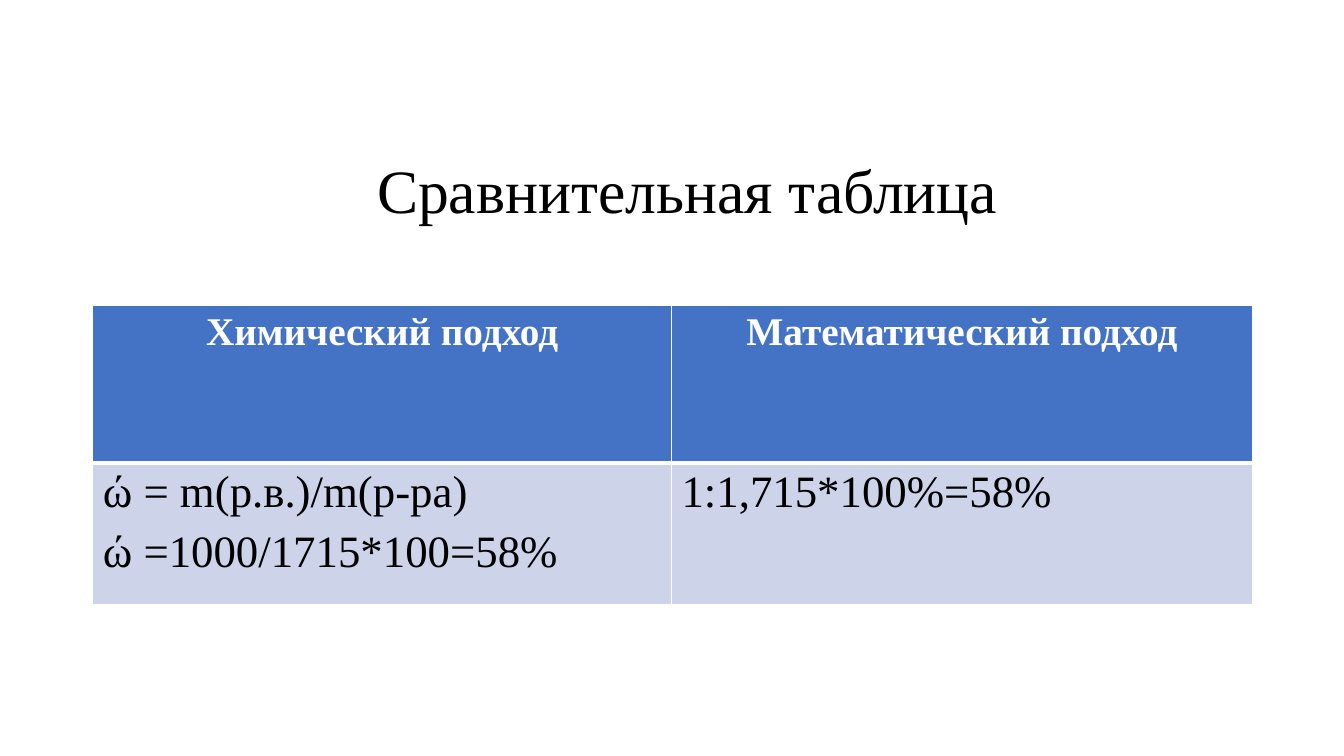
from lxml import etree
from pptx import Presentation
from pptx.dml.color import RGBColor
from pptx.enum import text as t
from pptx.oxml import ns
from pptx.util import Inches, Pt

FONT = "Times New Roman"
WHITE = RGBColor(0xFF, 0xFF, 0xFF)
BLACK = RGBColor(0, 0, 0)
BLUE = RGBColor(0x44, 0x72, 0xC4)
PALE = RGBColor(0xCD, 0xD4, 0xEA)

HEADS = ["Химический подход", "Математический подход"]
BODY = ["ώ = m(р.в.)/m(р-ра)\nώ =1000/1715*100=58%", "1:1,715*100%=58%"]
COLS = [5.74, 5.76]
ROWS = [1.56, 1.41]


def write(frame, words, size, color=BLACK, bold=False,
          align=t.PP_ALIGN.LEFT, space=None, gap=0):
    frame.word_wrap = True
    for i, line in enumerate(words.split("\n")):
        para = frame.add_paragraph() if i else frame.paragraphs[0]
        para.alignment = align
        para.line_spacing = space
        para.space_before = Pt(gap if i else 0)
        run = para.add_run()
        run.text = line
        font = run.font
        font.name, font.size, font.bold = FONT, Pt(size), bold
        font.color.rgb = color


def border(cell, side, width):
    props = cell._tc.get_or_add_tcPr()
    line = etree.SubElement(props, ns.qn("a:ln" + side), w=str(Pt(width)))
    fill = etree.SubElement(line, ns.qn("a:solidFill"))
    etree.SubElement(fill, ns.qn("a:srgbClr"), val=str(WHITE))


def add_title(slide, words):
    title = slide.shapes.title
    title.left, title.top = Inches(0.92), Inches(0.95)
    title.width, title.height = Inches(11.5), Inches(1.95)
    frame = title.text_frame
    frame.auto_size = t.MSO_AUTO_SIZE.NONE
    frame.vertical_anchor = t.MSO_ANCHOR.MIDDLE
    frame.margin_left = Inches(0.4)
    write(frame, words, 44, align=t.PP_ALIGN.CENTER, space=0.9)


def add_grid(slide):
    table = slide.shapes.add_table(
        len(ROWS), len(COLS), Inches(0.92), Inches(3.03),
        Inches(sum(COLS)), Inches(sum(ROWS))).table
    for col, width in zip(table.columns, COLS):
        col.width = Inches(width)
    for row, height in zip(table.rows, ROWS):
        row.height = Inches(height)
    for i, words in enumerate([HEADS, BODY]):
        for j, word in enumerate(words):
            cell = table.cell(i, j)
            for side, width in zip("LRTB", (1, 1, 3 if i else 1, 1 if i else 3)):
                border(cell, side, width)
            cell.fill.solid()
            cell.fill.fore_color.rgb = PALE if i else BLUE
            if i:
                write(cell.text_frame, word, 32, gap=7.5)
            else:
                write(cell.text_frame, word, 28, color=WHITE, bold=True,
                      align=t.PP_ALIGN.CENTER)


def main():
    deck = Presentation()
    deck.slide_width, deck.slide_height = Inches(13.33), Inches(7.5)
    slide = deck.slides.add_slide(deck.slide_layouts[5])
    add_title(slide, "Сравнительная таблица")
    add_grid(slide)
    deck.save("out.pptx")


if __name__ == "__main__":
    main()
